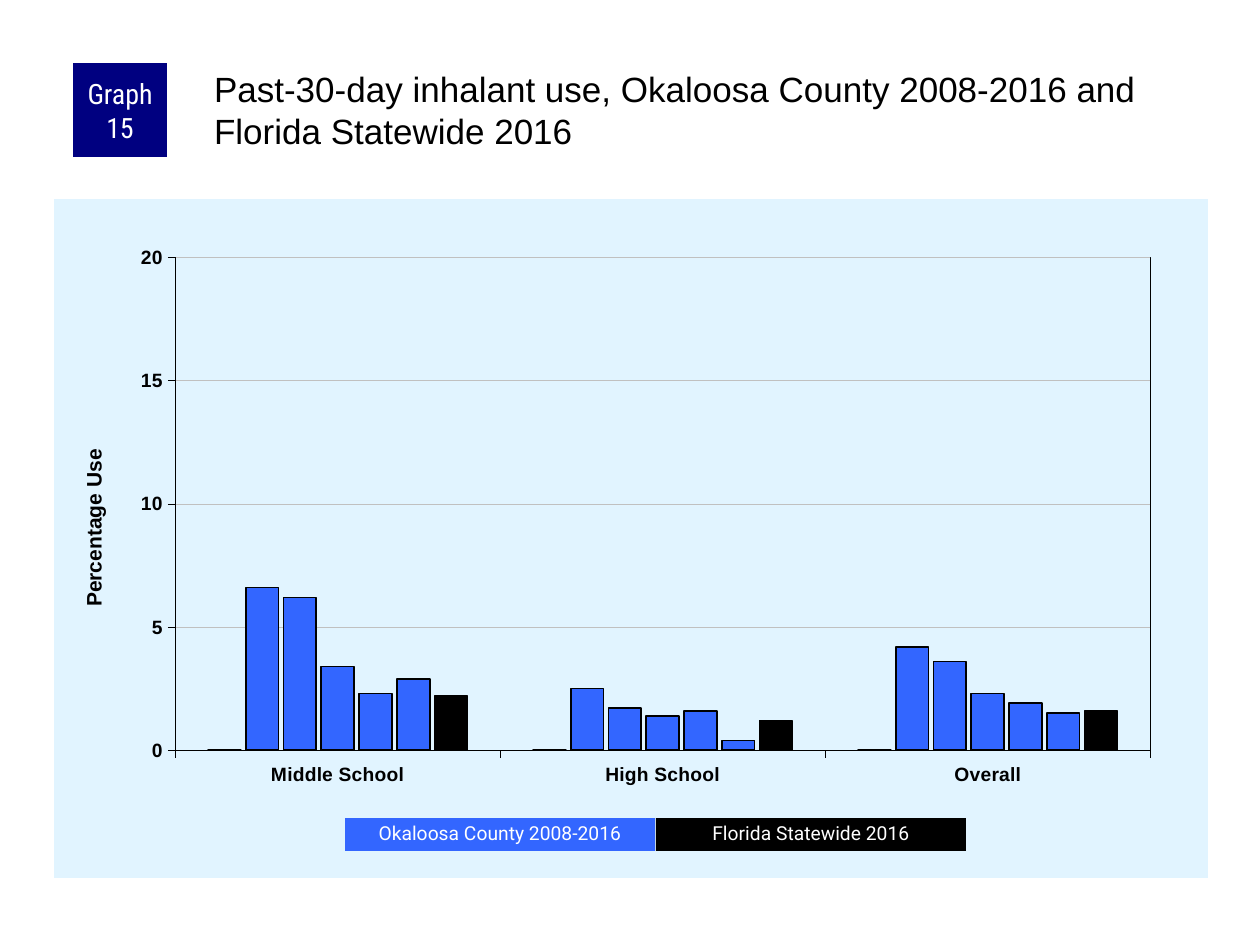
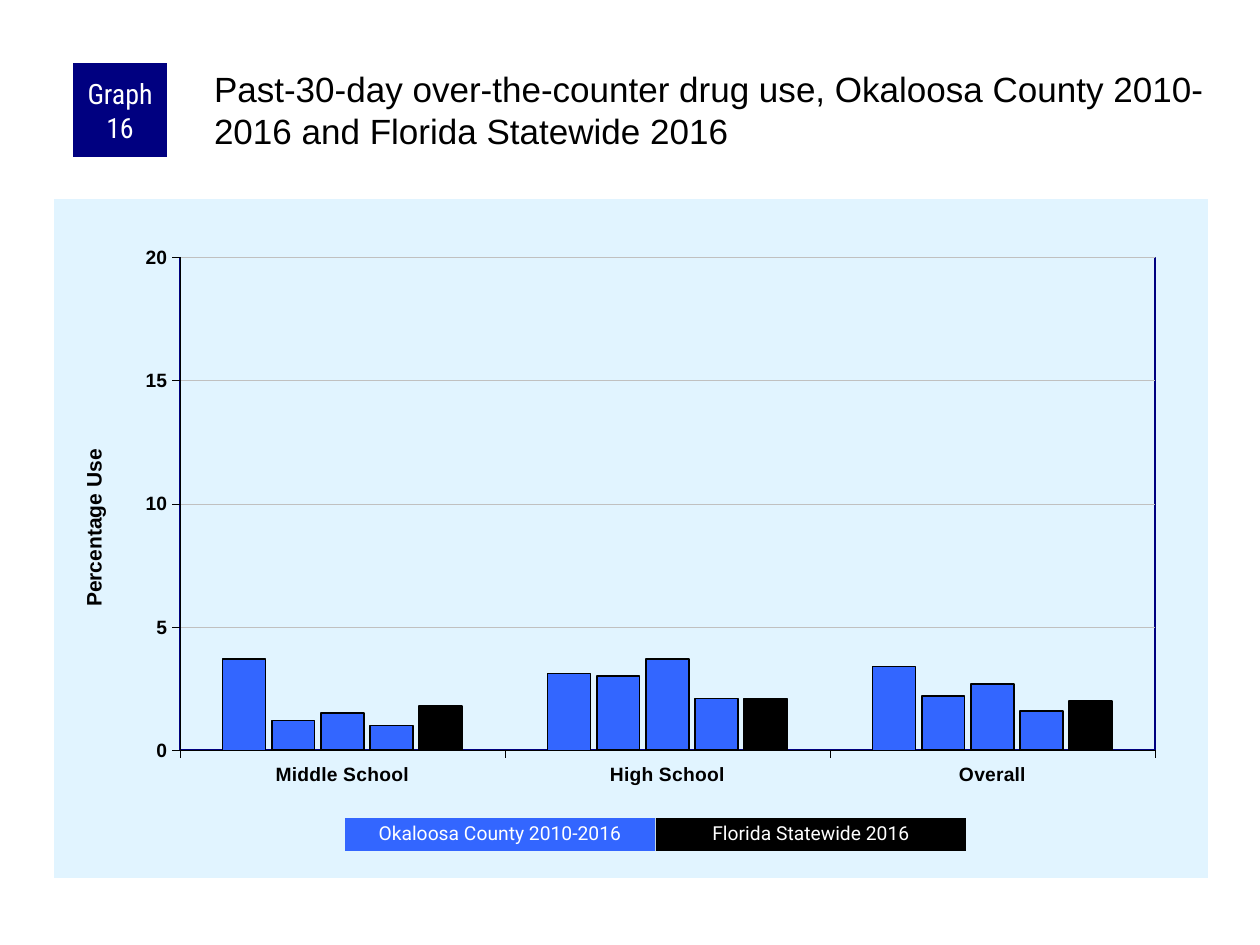
from lxml import etree
from pptx import Presentation
from pptx import util as u
from pptx.chart.data import CategoryChartData
from pptx.dml.color import RGBColor
from pptx.enum import chart as ch, shapes, text
from pptx.oxml import parse_xml
from pptx.oxml.ns import nsdecls, qn

COLORS = {
    "navy": "000080",
    "county": "3366FF",
    "state": "000000",
    "ink": "000000",
    "white": "FFFFFF",
    "panel": "E1F4FF",
    "grid": "C0C0C0",
}

SCHOOLS = ["Middle School", "High School", "Overall"]
GRAPHS = [
    {
        "badge": "Graph 15",
        "title": "Past-30-day inhalant use, Okaloosa County 2008-2016 and Florida Statewide 2016",
        "county": "Okaloosa County 2008-2016",
        "surveys": [(0, 0, 0), (6.6, 2.5, 4.2), (6.2, 1.7, 3.6), (3.4, 1.4, 2.3),
                    (2.3, 1.6, 1.9), (2.9, 0.4, 1.5), (2.2, 1.2, 1.6)],
        "first_outline": 1,
        "plot_left": 0.105,
        "frame": ("ink", 0.25),
    },
    {
        "badge": "Graph 16",
        "title": "Past-30-day over-the-counter drug use, Okaloosa County 2010-2016 "
                 "and Florida Statewide 2016",
        "county": "Okaloosa County 2010-2016",
        "surveys": [(3.7, 3.1, 3.4), (1.2, 3, 2.2), (1.5, 3.7, 2.7), (1, 2.1, 1.6),
                    (1.8, 2.1, 2)],
        "first_outline": 0.75,
        "plot_left": 0.109,
        "frame": ("navy", 1),
    },
]
STATE = "Florida Statewide 2016"

# Lengths in px, 126 to the inch
SLIDE = (1260, 945)
BADGE = (73, 63, 94, 94)
TITLE = (210, 63, 998, 105)
PANEL = (54, 199, 1154, 679)
KEY = (345, 818, 310, 33)
KEY_STEP = 311


def px(length):
    return u.Emu(round(length * 914400 / 126))


def box(lengths):
    return [px(length) for length in lengths]


def rgb(color):
    return RGBColor.from_string(COLORS[color])


def style_font(font, size, color, name, bold=False):
    font.size, font.name, font.bold = u.Pt(size), name, bold
    font.color.rgb = rgb(color)


def style_line(line, color, width):
    line.color.rgb = rgb(color)
    line.width = u.Pt(width)


def write(shape, words, *, size, font, color="white", align=text.PP_ALIGN.CENTER,
          anchor=text.MSO_ANCHOR.MIDDLE, insets=(13, 6, 13, 6), spacing=1.0):
    frame = shape.text_frame
    frame.word_wrap = True
    frame.auto_size = text.MSO_AUTO_SIZE.NONE
    frame.vertical_anchor = anchor
    (frame.margin_left, frame.margin_top,
     frame.margin_right, frame.margin_bottom) = box(insets)
    paragraph = frame.paragraphs[0]
    paragraph.alignment, paragraph.line_spacing = align, spacing
    run = paragraph.add_run()
    run.text = words
    style_font(run.font, size, color, font)


def add_block(slide, place, fill, words, **format):
    block = slide.shapes.add_shape(shapes.MSO_SHAPE.RECTANGLE, *box(place))
    block.shadow.inherit = False
    block.fill.solid()
    block.fill.fore_color.rgb = rgb(fill)
    block.line.fill.background()
    write(block, words, **format)


def place_in_chart(part, index, **fractions):
    """Give a chart part a manual layout, in fractions of the chart."""
    for old in part.findall(qn("c:layout")):
        part.remove(old)
    layout = etree.Element(qn("c:layout"))
    manual = etree.SubElement(layout, qn("c:manualLayout"))
    settings = {"xMode": "edge", "yMode": "edge", **fractions}
    if "w" in fractions:
        settings = {"layoutTarget": "inner", **settings}
    for tag, value in settings.items():
        etree.SubElement(manual, qn(f"c:{tag}")).set("val", str(value))
    part.insert(index, layout)


def area_format(fill=None, line=None, width=0):
    """Fill and outline for a chart area, which has no public format."""
    def paint(color):
        if color is None:
            return "<a:noFill/>"
        return f'<a:solidFill><a:srgbClr val="{COLORS[color]}"/></a:solidFill>'

    return parse_xml(
        f'<c:spPr {nsdecls("c", "a")}>{paint(fill)}'
        f'<a:ln w="{u.Pt(width)}">{paint(line)}</a:ln></c:spPr>')


def style_axes(chart):
    for axis in (chart.category_axis, chart.value_axis):
        axis.major_tick_mark = ch.XL_TICK_MARK.OUTSIDE
        axis.minor_tick_mark = ch.XL_TICK_MARK.NONE
        style_font(axis.tick_labels.font, 11, "ink", "Arial", bold=True)
        style_line(axis.format.line, "ink", 0.25)
    percent = chart.value_axis
    percent.minimum_scale, percent.maximum_scale, percent.major_unit = 0, 20, 5
    percent.has_major_gridlines = True
    style_line(percent.major_gridlines.format.line, "grid", 0.25)
    caption = percent.axis_title.text_frame
    caption.text = "Percentage Use"
    style_font(caption.paragraphs[0].runs[0].font, 12, "ink", "Arial", bold=True)
    place_in_chart(percent.axis_title._element, 1, x=0.02, y=0.363)


def add_use_chart(slide, graph):
    data = CategoryChartData()
    data.categories = SCHOOLS
    for number, rates in enumerate(graph["surveys"], 1):
        data.add_series(f"Series {number}", rates)
    chart = slide.shapes.add_chart(
        ch.XL_CHART_TYPE.COLUMN_CLUSTERED, *box(PANEL), data).chart
    chart.has_legend = chart.has_title = False
    style_font(chart.font, 8, "ink", "Arial")
    style_axes(chart)

    columns = chart.plots[0]
    columns.gap_width, columns.overlap = 200, -15
    columns.vary_by_categories = False
    surveys = list(columns.series)
    for survey in surveys:
        survey.format.fill.solid()
        survey.format.fill.fore_color.rgb = rgb(
            "state" if survey is surveys[-1] else "county")
        style_line(survey.format.line, "ink",
                   graph["first_outline"] if survey is surveys[0] else 1)

    space = chart._chartSpace
    space.find(qn("c:txPr")).addprevious(area_format("panel"))
    plot_area = space.find(f".//{qn('c:plotArea')}")
    place_in_chart(plot_area, 0, x=graph["plot_left"], y=0.086, w=0.845, h=0.726)
    plot_area.append(area_format(None, *graph["frame"]))


def add_graph_slide(deck, graph):
    slide = deck.slides.add_slide(deck.slide_layouts.get_by_name("Title Only"))
    add_use_chart(slide, graph)
    add_block(slide, BADGE, "navy", graph["badge"], size=16,
              font="Roboto Condensed", insets=(6, 0, 6, 0))
    title = slide.shapes.title
    title.left, title.top, title.width, title.height = box(TITLE)
    write(title, graph["title"], size=20, font="Arial", color="ink",
          align=text.PP_ALIGN.LEFT, anchor=text.MSO_ANCHOR.TOP, insets=(4, 4, 0, 0))
    left, *rest = KEY
    for order, (group, label) in enumerate([("county", graph["county"]), ("state", STATE)]):
        add_block(slide, (left + order * KEY_STEP, *rest), group, label,
                  size=11, font="Roboto", spacing=0.9)


def main():
    deck = Presentation()
    deck.slide_width, deck.slide_height = box(SLIDE)
    for graph in GRAPHS:
        add_graph_slide(deck, graph)
    deck.save("out.pptx")


if __name__ == "__main__":
    main()
